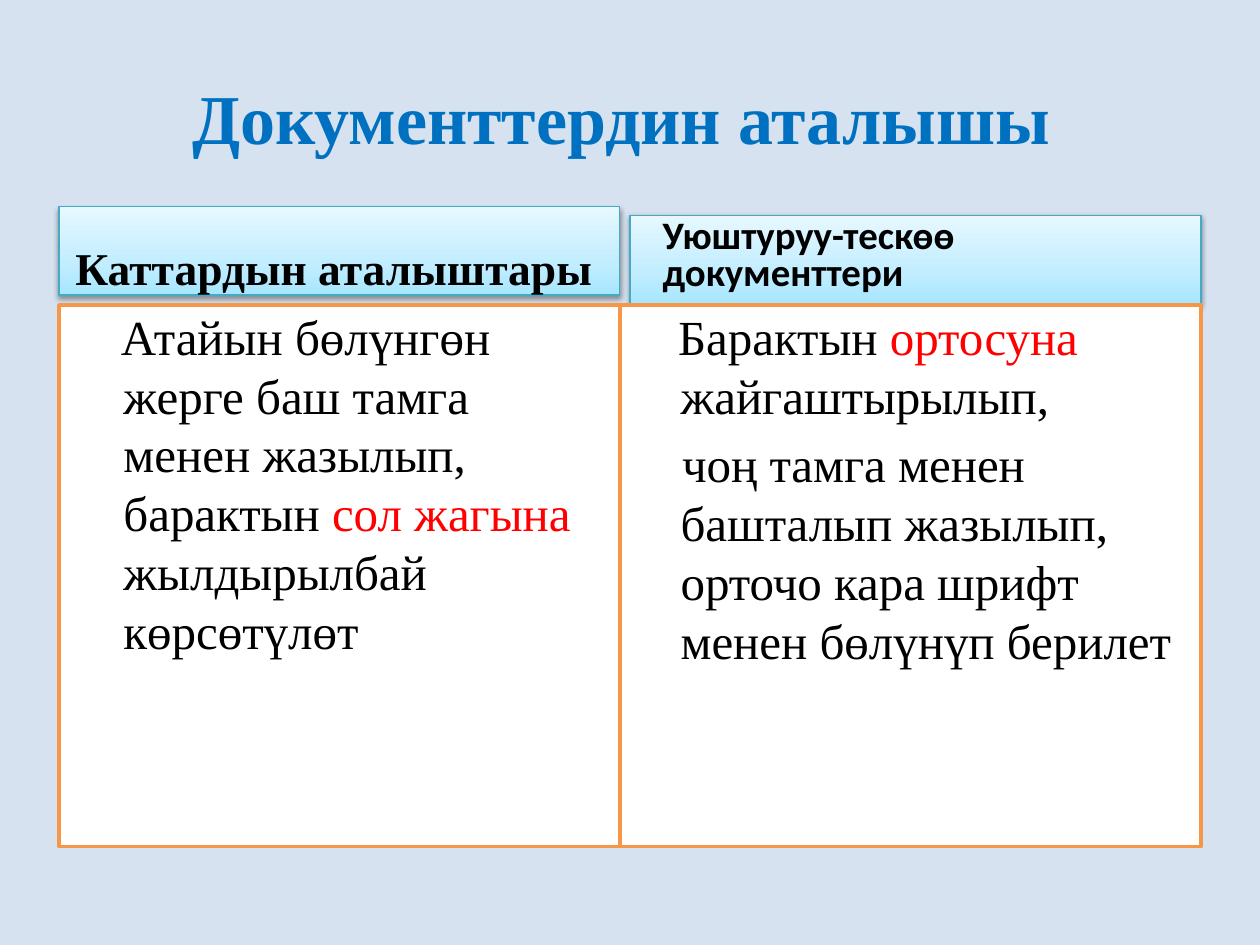
from pptx import Presentation
from pptx.dml.color import RGBColor
from pptx.enum.shapes import MSO_SHAPE
from pptx.enum.text import MSO_ANCHOR, PP_ALIGN
from pptx.oxml import parse_xml
from pptx.oxml.ns import nsdecls
from pptx.util import Cm, Pt

SKY = RGBColor(0xD6, 0xE2, 0xF0)
BLUE = RGBColor(0x00, 0x70, 0xC0)
TEAL = RGBColor(0x46, 0xAA, 0xC5)
ORANGE = RGBColor(0xF7, 0x96, 0x46)
WHITE = RGBColor(0xFF, 0xFF, 0xFF)
BLACK = RGBColor(0x00, 0x00, 0x00)
RED = RGBColor(0xFF, 0x00, 0x00)
STOPS = ((0, "A7E6FF"), (35, "C1EDFF"), (100, "E7F8FF"))

SERIF, SANS = "Times New Roman", "Calibri"
HEAD = {"size": Pt(26), "name": SERIF, "bold": True}
SUBHEAD = {"size": Pt(22.2), "name": SANS, "bold": True}
BODY = {"size": Pt(28), "name": SERIF, "bold": False}


def add_box(slide, area, line, width):
    """Outlined rectangle without a shadow."""
    box = slide.shapes.add_shape(MSO_SHAPE.RECTANGLE, *map(Cm, area))
    box.shadow.inherit = False
    box.fill.solid()
    box.fill.fore_color.rgb = WHITE
    box.line.color.rgb = line
    box.line.width = Pt(width)
    return box


def add_banner(slide, area):
    """Heading bar with a vertical gradient and a soft shadow."""
    bar = add_box(slide, area, TEAL, 0.75)
    props = bar._element.spPr
    stops = "".join(f'<a:gs pos="{pos * 1000}"><a:srgbClr val="{tint}"/></a:gs>'
                    for pos, tint in STOPS)
    grad = parse_xml(f'<a:gradFill {nsdecls("a")} rotWithShape="1"><a:gsLst>{stops}'
                     '</a:gsLst><a:lin ang="16200000" scaled="0"/></a:gradFill>')
    props.replace(props.find(".//{*}solidFill"), grad)
    props.find("{*}effectLst").append(parse_xml(
        f'<a:outerShdw {nsdecls("a")} blurRad="{Pt(3.1)}" dist="{Pt(1.6)}" '
        'dir="5400000" rotWithShape="0"><a:srgbClr val="000000">'
        '<a:alpha val="38000"/></a:srgbClr></a:outerShdw>'))


def add_run(para, text, style, color):
    run = para.add_run()
    run.text = text
    for key, value in style.items():
        setattr(run.font, key, value)
    run.font.color.rgb = color


def add_text(slide, area, paras, style, anchor, layout, indents=()):
    """Text box; each paragraph is a list of (text, colour) runs."""
    frame = slide.shapes.add_textbox(*map(Cm, area)).text_frame
    frame.word_wrap = True
    frame.vertical_anchor = anchor
    for i, runs in enumerate(paras):
        para = frame.paragraphs[0] if i == 0 else frame.add_paragraph()
        for key, value in layout.items():
            setattr(para, key, value)
        if indents:
            props = para._p.get_or_add_pPr()
            props.set("marL", str(Cm(0.97)))
            props.set("indent", str(Cm(indents[i])))
        for text, color in runs:
            add_run(para, text, style, color)


def set_title(slide, text):
    title = slide.shapes.title
    area = {"left": 1.27, "top": 0.76, "width": 22.86, "height": 3.18}
    for key, value in area.items():
        setattr(title, key, Cm(value))
    title.text_frame.vertical_anchor = MSO_ANCHOR.MIDDLE
    para = title.text_frame.paragraphs[0]
    para.alignment = PP_ALIGN.CENTER
    add_run(para, text, {"size": Pt(40), "name": SERIF, "bold": True}, BLUE)


def main():
    deck = Presentation()
    deck.slide_width, deck.slide_height = Cm(25.4), Cm(19.05)
    slide = deck.slides.add_slide(deck.slide_layouts[5])
    slide.background.fill.solid()
    slide.background.fill.fore_color.rgb = SKY
    set_title(slide, "Документтердин аталышы ")

    # Heading bars and column panels
    for area in ((1.19, 4.17, 11.3, 1.78), (12.7, 4.34, 11.51, 1.78)):
        add_banner(slide, area)
    for left, width in ((12.5, 11.71), (1.19, 11.3)):
        add_box(slide, (left, 6.15, width, 10.92), ORANGE, 2)

    # Column headings
    tight = {"line_spacing": 0.8, "space_before": Pt(5)}
    for area, text, style in (
            ((1.27, 3.94, 11.23, 2.11), "Каттардын аталыштары", HEAD),
            ((13.11, 4.17, 11.02, 1.88), "Уюштуруу-тескөө документтери", SUBHEAD)):
        add_text(slide, area, [[(text, BLACK)]], style, MSO_ANCHOR.BOTTOM, tight)

    # Column texts
    letters = [[("Атайын бөлүнгөн жерге баш тамга менен жазылып, барактын ", BLACK),
                ("сол жагына ", RED),
                ("жылдырылбай көрсөтүлөт", BLACK)]]
    orders = [[("Барактын ", BLACK), ("ортосуна", RED), (" жайгаштырылып,", BLACK)],
              [("чоң тамга менен башталып жазылып, орточо кара шрифт "
                "менен бөлүнүп берилет", BLACK)]]
    for left, width, paras in ((1.27, 11.23, letters), (12.5, 11.63, orders)):
        add_text(slide, (left, 6.05, width, 10.97), paras, BODY, MSO_ANCHOR.TOP,
                 {"space_before": Pt(5.6)}, (-0.05, 0.03))

    deck.save("out.pptx")


if __name__ == "__main__":
    main()
